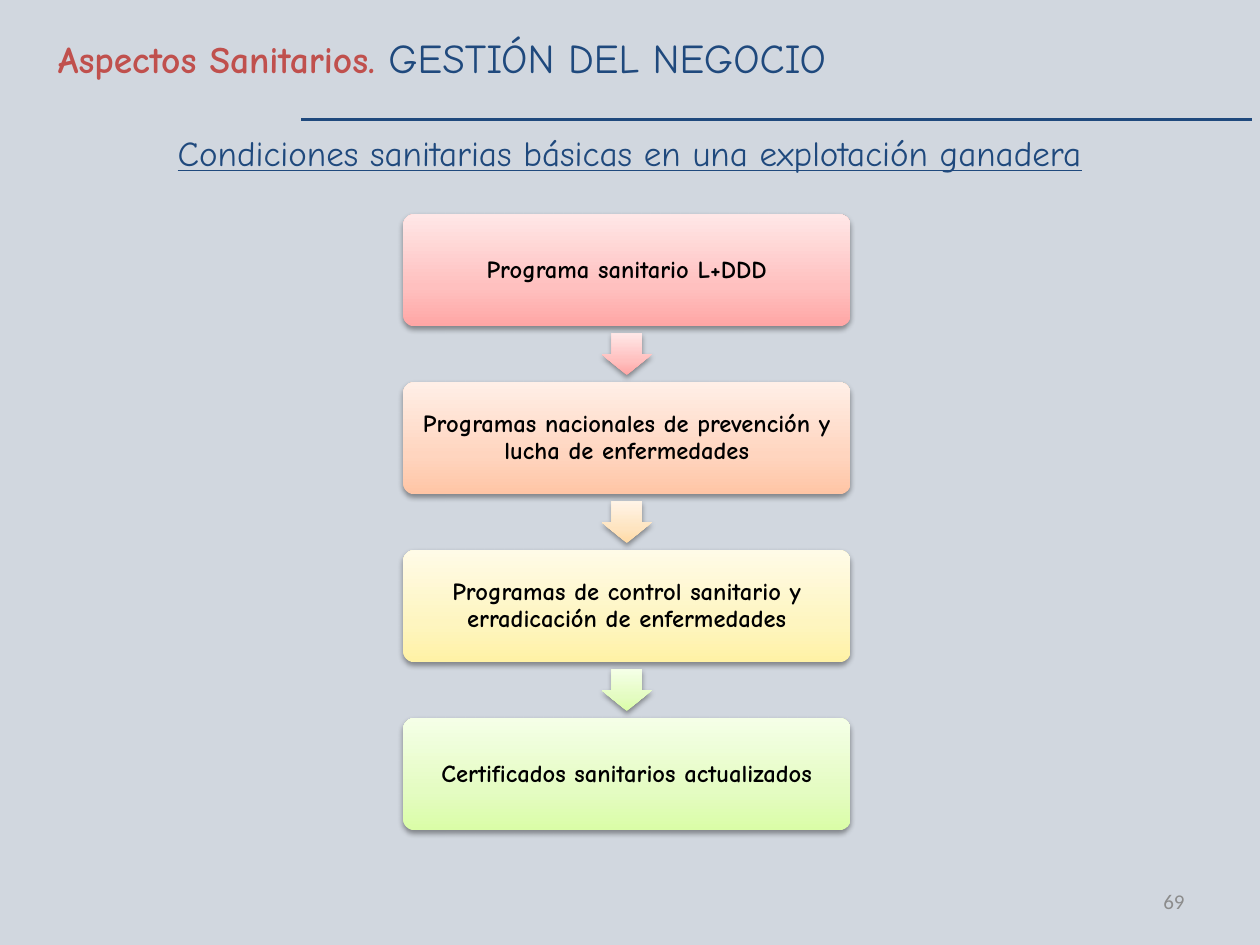
from dataclasses import dataclass

from lxml import etree
from pptx import Presentation
from pptx.dml.color import RGBColor
from pptx.enum.shapes import MSO_CONNECTOR, MSO_SHAPE
from pptx.enum.text import MSO_ANCHOR, PP_ALIGN
from pptx.oxml.ns import qn
from pptx.util import Inches, Pt

LEFT, CENTER, RIGHT = PP_ALIGN.LEFT, PP_ALIGN.CENTER, PP_ALIGN.RIGHT
MIDDLE, TOP = MSO_ANCHOR.MIDDLE, MSO_ANCHOR.TOP
ROUND, DOWN = MSO_SHAPE.ROUNDED_RECTANGLE, MSO_SHAPE.DOWN_ARROW
STRAIGHT = MSO_CONNECTOR.STRAIGHT

BACK = RGBColor(0xD1, 0xD7, 0xDF)
NAVY = RGBColor(0x1F, 0x49, 0x7D)
RED = RGBColor(0xC0, 0x50, 0x4D)
GRAY = RGBColor(0x8C, 0x8C, 0x8C)
BLACK = RGBColor(0, 0, 0)
ROSE = (RGBColor(0xFF, 0xA6, 0xA5), RGBColor(0xFF, 0xC0, 0xBF), RGBColor(0xFF, 0xE7, 0xE7))
PEACH = (RGBColor(0xFF, 0xC5, 0xA5), RGBColor(0xFF, 0xD5, 0xBF), RGBColor(0xFF, 0xEF, 0xE7))
SAND = (RGBColor(0xFF, 0xDA, 0xA5), RGBColor(0xFE, 0xE4, 0xC0), RGBColor(0xFF, 0xF4, 0xE7))
LEMON = (RGBColor(0xFF, 0xF2, 0xA5), RGBColor(0xFE, 0xF5, 0xC0), RGBColor(0xFF, 0xFB, 0xE7))
LIME = (RGBColor(0xDA, 0xFD, 0xA7), RGBColor(0xE4, 0xFC, 0xC2), RGBColor(0xF5, 0xFF, 0xE7))
STOPS = (0, 35, 100)

MID, START, PITCH = 4.975, 1.7, 1.333
BOX_W, BOX_H = 3.55, 0.89
ARROW_W, ARROW_H = 0.4, 0.33


@dataclass
class Step:
    text: str
    tint: tuple
    arrow: tuple = ()


STEPS = [
    Step("Programa sanitario L+DDD", ROSE, ROSE),
    Step("Programas nacionales de prevención y lucha de enfermedades", PEACH, SAND),
    Step("Programas de control sanitario y erradicación de enfermedades", LEMON, LIME),
    Step("Certificados sanitarios actualizados", LIME),
]


def place(shape, left: float, top: float, width: float, height: float) -> None:
    shape.left, shape.top = Inches(left), Inches(top)
    shape.width, shape.height = Inches(width), Inches(height)


def write(shape, text: str, *, size: float, color: RGBColor, font: str = "Comic Neue",
          bold: bool = False, line: bool = False, align=CENTER, anchor=MIDDLE) -> None:
    frame = shape.text_frame
    frame.word_wrap = True
    frame.vertical_anchor = anchor
    para = frame.paragraphs[0]
    para.alignment = align
    para.space_before = Pt(0)
    run = para.add_run()
    run.text = text
    run.font.name, run.font.size = font, Pt(size)
    run.font.bold, run.font.underline = bold, line
    run.font.color.rgb = color


def shade(shape, tint: tuple) -> None:
    shape.fill.gradient()
    shape.fill.gradient_angle = 90
    stops = shape._element.spPr.find(qn("a:gradFill")).find(qn("a:gsLst"))
    for old in list(stops):
        stops.remove(old)
    for pos, color in zip(STOPS, tint):
        stop = etree.SubElement(stops, qn("a:gs"), pos=str(pos * 1000))
        etree.SubElement(stop, qn("a:srgbClr"), val=str(color))
    shape.line.fill.background()
    shape.shadow.inherit = False
    effects = shape._element.spPr.find(qn("a:effectLst"))
    cast = etree.SubElement(effects, qn("a:outerShdw"), blurRad=str(Pt(3.1)),
                            dist=str(Pt(1.6)), dir="5400000", rotWithShape="0")
    tone = etree.SubElement(cast, qn("a:srgbClr"), val=str(BLACK))
    etree.SubElement(tone, qn("a:alpha"), val="38000")


def block(slide, kind, top: float, width: float, height: float, tint: tuple):
    shape = slide.shapes.add_shape(kind, Inches(MID - width / 2), Inches(top),
                                   Inches(width), Inches(height))
    shade(shape, tint)
    return shape


def draw(slide, step: Step, top: float) -> None:
    box = block(slide, ROUND, top, BOX_W, BOX_H, step.tint)
    box.adjustments[0] = 0.1
    frame = box.text_frame
    frame.margin_left = frame.margin_right = Inches(0.09)
    frame.margin_top = frame.margin_bottom = Inches(0.09)
    write(box, step.text, size=14, color=BLACK, bold=True)
    frame.paragraphs[0].line_spacing = 0.9
    if step.arrow:
        gap = PITCH - BOX_H
        arrow = block(slide, DOWN, top + BOX_H + (gap - ARROW_H) / 2,
                      ARROW_W, ARROW_H, step.arrow)
        arrow.adjustments[0], arrow.adjustments[1] = 0.6, 0.5


def main() -> None:
    deck = Presentation()
    deck.slide_width, deck.slide_height = Inches(10), Inches(7.5)
    slide = deck.slides.add_slide(deck.slide_layouts[1])
    slide.background.fill.solid()
    slide.background.fill.fore_color.rgb = BACK

    title, body = slide.placeholders
    place(title, 0.36, 0, 9.64, 0.9)
    write(title, "Aspectos Sanitarios. ", size=21.4, color=RED, bold=True, align=LEFT)
    write(title, "GESTIÓN DEL NEGOCIO", size=23.4, color=NAVY, align=LEFT)

    place(body, 0.5, 0.99, 9, 5.71)
    props = body.text_frame.paragraphs[0]._p.get_or_add_pPr()
    props.set("marL", "0")
    props.set("indent", "0")
    etree.SubElement(props, qn("a:buNone"))
    write(body, "Condiciones sanitarias básicas en una explotación ganadera",
          size=20, color=NAVY, line=True, anchor=TOP)

    rule = slide.shapes.add_connector(STRAIGHT, Inches(2.39), Inches(0.95),
                                      Inches(9.94), Inches(0.95))
    rule.line.color.rgb = NAVY
    rule.line.width = Pt(1.5)
    etree.SubElement(rule._element.spPr, qn("a:effectLst"))

    for i, step in enumerate(STEPS):
        draw(slide, step, START + i * PITCH)

    page = slide.shapes.add_textbox(Inches(7.17), Inches(6.95), Inches(2.33), Inches(0.4))
    write(page, "69", size=12, color=GRAY, font="Calibri", align=RIGHT)
    deck.save("out.pptx")


if __name__ == "__main__":
    main()
